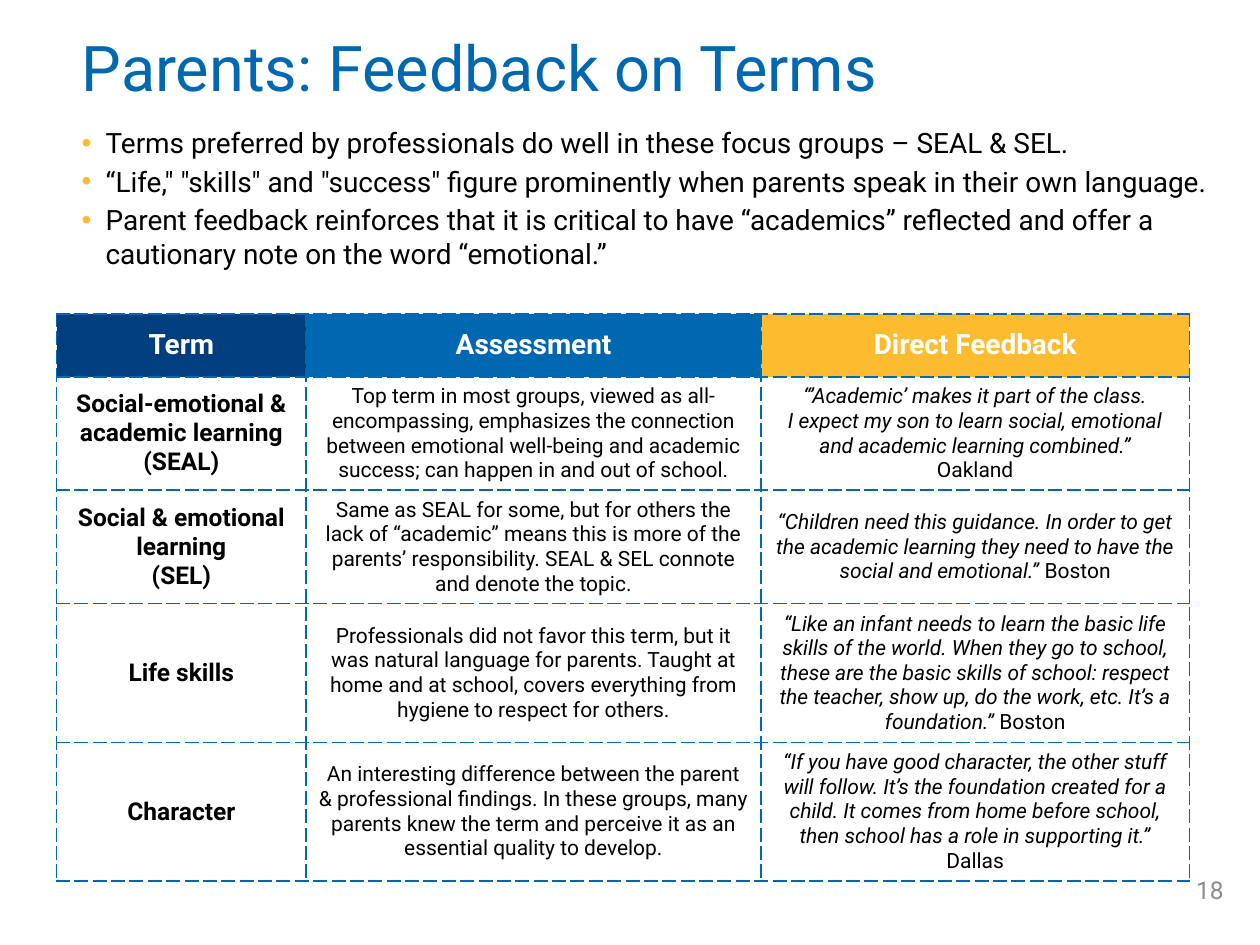
"""Build the slide on parents' feedback about terms for social-emotional learning."""
from lxml import etree
from pptx import Presentation
from pptx.dml.color import RGBColor
from pptx.enum.text import MSO_ANCHOR, PP_ALIGN
from pptx.oxml.ns import qn
from pptx.util import Inches, Pt

LEFT, CENTER, RIGHT = PP_ALIGN.LEFT, PP_ALIGN.CENTER, PP_ALIGN.RIGHT
TOP, MIDDLE = MSO_ANCHOR.TOP, MSO_ANCHOR.MIDDLE
BLUE = RGBColor(0x00, 0x67, 0xB1)
NAVY = RGBColor(0x00, 0x3E, 0x7E)
GOLD = RGBColor(0xFD, 0xBB, 0x30)
GRAY = RGBColor(0x8C, 0x8C, 0x8C)
BLACK = RGBColor(0, 0, 0)
WHITE = RGBColor(255, 255, 255)

TITLE = "Parents: Feedback on Terms"
PAGE = "18"
POINTS = [
    "Terms preferred by professionals do well in these focus groups – SEAL & SEL.",
    "“Life,\" \"skills\" and \"success\" figure prominently when parents speak in their own language.",
    "Parent feedback reinforces that it is critical to have “academics” reflected and offer a "
    "cautionary note on the word “emotional.”",
]
HEADERS = [("Term", NAVY), ("Assessment", BLUE), ("Direct Feedback", GOLD)]
ROWS = [
    (["Social-emotional & academic learning", "(SEAL)"],
     "Top term in most groups, viewed as all-encompassing, emphasizes the connection between "
     "emotional well-being and academic success; can happen in and out of school.",
     "“’Academic’ makes it part of the class.\nI expect my son to learn social, emotional and "
     "academic learning combined.”", "Oakland", True),
    (["Social & emotional learning", "(SEL)"],
     "Same as SEAL for some, but for others the lack of “academic” means this is more of the "
     "parents’ responsibility. SEAL & SEL connote and denote the topic.",
     "“Children need this guidance. In order to get the academic learning they need to have the "
     "social and emotional.” ", "Boston", False),
    (["Life skills"],
     "Professionals did not favor this term, but it was natural language for parents. Taught at "
     "home and at school, covers everything from hygiene to respect for others.",
     "“Like an infant needs to learn the basic life skills of the world. When they go to school, "
     "these are the basic skills of school: respect the teacher, show up, do the work, etc. It’s "
     "a foundation.” ", "Boston", False),
    (["Character"],
     "An interesting difference between the parent & professional findings. In these groups, many "
     "parents knew the term and perceive it as an essential quality to develop.",
     "“If you have good character, the other stuff will follow. It’s the foundation created for a "
     "child. It comes from home before school, then school has a role in supporting it.” ",
     "Dallas", False),
]
COLUMN_WIDTHS = [1.98, 3.61, 3.4]
ROW_HEIGHTS = [0.5, 0.9, 0.9, 1.1, 1.1]

HEADER_FONT = {"size": Pt(16), "bold": True}
TERM_FONT = {"size": Pt(14), "bold": True}
BODY_FONT = {"size": Pt(12), "bold": False}
QUOTE_FONT = {**BODY_FONT, "italic": True}


def add_run(paragraph, text, color, font):
    for number, line in enumerate(text.split("\n")):
        if number:
            paragraph.add_line_break()
        run = paragraph.add_run()
        run.text = line
        run.font.color.rgb = color
        for name, value in {"name": "Roboto", **font}.items():
            setattr(run.font, name, value)


def write(frame, paragraphs, color, align):
    """Fill a text frame; each paragraph is a list of (text, font) runs."""
    for number, runs in enumerate(paragraphs):
        paragraph = frame.add_paragraph() if number else frame.paragraphs[0]
        paragraph.alignment = align
        for text, font in runs:
            add_run(paragraph, text, color, font)


def add_text(slide, place, paragraphs, color, align=LEFT, anchor=MIDDLE):
    frame = slide.shapes.add_textbox(*map(Inches, place)).text_frame
    frame.word_wrap = True
    frame.vertical_anchor = anchor
    write(frame, paragraphs, color, align)
    return frame


def add_bullet(paragraph):
    properties = paragraph._p.get_or_add_pPr()
    properties.set("marL", str(Inches(0.19)))
    properties.set("indent", str(-Inches(0.19)))
    bullet_color = etree.SubElement(properties, qn("a:buClr"))
    etree.SubElement(bullet_color, qn("a:srgbClr"), val=str(GOLD))
    etree.SubElement(properties, qn("a:buFont"), typeface="Arial")
    etree.SubElement(properties, qn("a:buChar"), char="•")
    paragraph.space_after = Pt(2.8)


def add_borders(cell):
    properties = cell._tc.get_or_add_tcPr()
    for side in ("lnL", "lnR", "lnT", "lnB"):
        line = etree.SubElement(properties, qn(f"a:{side}"), w=str(Pt(1)))
        fill = etree.SubElement(line, qn("a:solidFill"))
        etree.SubElement(fill, qn("a:srgbClr"), val=str(BLUE))
        etree.SubElement(line, qn("a:prstDash"), val="sysDash")


def fill_cell(cell, paragraphs, color, background):
    add_borders(cell)
    cell.fill.solid()
    cell.fill.fore_color.rgb = background
    cell.vertical_anchor = MIDDLE
    write(cell.text_frame, paragraphs, color, CENTER)


def add_feedback_table(slide):
    size = sum(COLUMN_WIDTHS), sum(ROW_HEIGHTS)
    table = slide.shapes.add_table(len(ROW_HEIGHTS), len(COLUMN_WIDTHS),
                                   *map(Inches, (0.45, 2.49, *size))).table
    table.horz_banding = False
    for column, width in zip(table.columns, COLUMN_WIDTHS):
        column.width = Inches(width)
    for row, height in zip(table.rows, ROW_HEIGHTS):
        row.height = Inches(height)
    for column, (header, background) in enumerate(HEADERS):
        fill_cell(table.cell(0, column), [[(header, HEADER_FONT)]], WHITE, background)
    for row, (term, assessment, quote, city, city_below) in enumerate(ROWS, 1):
        said, place = (quote, QUOTE_FONT), (city, BODY_FONT)
        contents = [
            [[(line, TERM_FONT)] for line in term],
            [[(assessment, BODY_FONT)]],
            [[said], [place]] if city_below else [[said, place]],
        ]
        for column, paragraphs in enumerate(contents):
            fill_cell(table.cell(row, column), paragraphs, BLACK, WHITE)


def main():
    deck = Presentation()
    deck.slide_width, deck.slide_height = Inches(10), Inches(7.5)
    slide = deck.slides.add_slide(deck.slide_layouts[6])
    add_text(slide, (0.55, 0, 7.84, 1.06), [[(TITLE, {"size": Pt(36)})]], BLUE)
    add_text(slide, (9.07, 6.86, 0.74, 0.4), [[(PAGE, {"size": Pt(14)})]], GRAY, RIGHT)
    add_feedback_table(slide)
    points = add_text(slide, (0.55, 0.95, 9.19, 1.26),
                      [[(point, {"size": Pt(16)})] for point in POINTS], BLACK, anchor=TOP)
    for paragraph in points.paragraphs:
        add_bullet(paragraph)
    deck.save("out.pptx")


if __name__ == "__main__":
    main()
